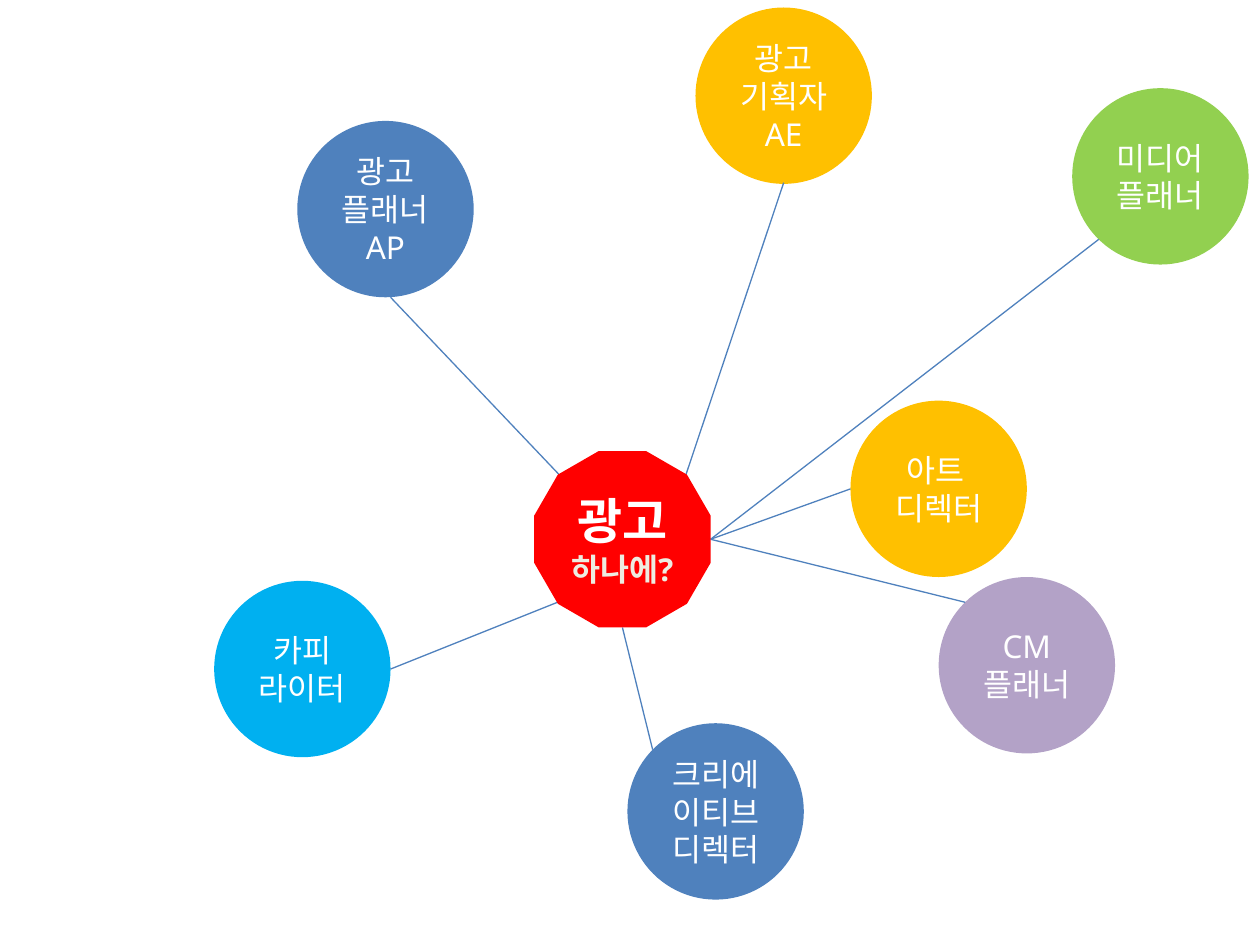
from dataclasses import dataclass

from lxml import etree
from pptx import Presentation
from pptx.dml.color import RGBColor
from pptx.enum.shapes import MSO_CONNECTOR, MSO_SHAPE
from pptx.enum.text import MSO_ANCHOR, PP_ALIGN
from pptx.oxml.ns import qn
from pptx.util import Inches, Pt


@dataclass(frozen=True)
class Theme:
    font: str = "Noto Sans"
    blue: str = "4F81BD"
    green: str = "92D050"
    red: str = "FF0000"
    amber: str = "FFC000"
    violet: str = "B3A2C7"
    sky: str = "00B0F0"
    white: str = "FFFFFF"
    cream: str = "EEECE1"
    title: int = 28
    gap: int = 24
    body: int = 18
    line: float = 0.75


THEME = Theme()
SIZE = 1.4  # every node has the same diameter

# left, top, fill, lines of text, spoke start on the hub, spoke end on the role
ROLES = [
    (2.36, 0.96, THEME.blue, ["광고", "플래너", "AP"], (4.45, 3.78), (3.1, 2.36)),
    (8.51, 0.7, THEME.green, ["미디어", "플래너"], (5.64, 4.28), (8.72, 1.9)),
    (5.52, 0.06, THEME.amber, ["광고", "기획자", "AE"], (5.44, 3.78), (6.22, 1.45)),
    (6.75, 3.18, THEME.amber, ["아트 ", "디렉터"], (5.64, 4.28), (6.75, 3.88)),
    (7.45, 4.58, THEME.violet, ["CM", "플래너"], (5.64, 4.28), (7.66, 4.78)),
    (4.98, 5.74, THEME.blue, ["크리에이티브 디렉터"], (4.94, 4.98), (5.18, 5.95)),
    (1.7, 4.61, THEME.sky, ["카피", "라이터"], (4.45, 4.77), (3.1, 5.31)),
]


def style_font(font, size, color, bold=False):
    font.name = THEME.font
    font.size = Pt(size)
    font.bold = bold
    font.color.rgb = RGBColor.from_string(color)


def add_node(page, kind, left, top, fill):
    """Add a plain filled node and return its text frame."""
    node = page.shapes.add_shape(
        kind, Inches(left), Inches(top), Inches(SIZE), Inches(SIZE))
    node.shadow.inherit = False
    node.fill.solid()
    node.fill.fore_color.rgb = RGBColor.from_string(fill)
    node.line.fill.background()
    frame = node.text_frame
    frame.word_wrap = True
    frame.vertical_anchor = MSO_ANCHOR.MIDDLE
    return frame


def add_role(page, left, top, fill, lines):
    frame = add_node(page, MSO_SHAPE.OVAL, left, top, fill)
    for index, line in enumerate(lines):
        para = frame.add_paragraph() if index else frame.paragraphs[0]
        para.text = line
        para.alignment = PP_ALIGN.CENTER
        style_font(para.font, THEME.body, THEME.white)


def add_hub(page, left, top):
    frame = add_node(page, MSO_SHAPE.DODECAGON, left, top, THEME.red)
    para = frame.paragraphs[0]
    para.alignment = PP_ALIGN.CENTER
    for text, size, color in [("광고", THEME.title, THEME.white),
                              (" ", THEME.gap, THEME.white),
                              ("하나에?", THEME.body, THEME.cream)]:
        span = para.add_run()
        span.text = text
        style_font(span.font, size, color, bold=True)


def add_spoke(page, start, end):
    spoke = page.shapes.add_connector(
        MSO_CONNECTOR.STRAIGHT, *(Inches(value) for value in start + end))
    spoke.line.color.rgb = RGBColor.from_string(THEME.blue)
    spoke.line.width = Pt(THEME.line)
    etree.SubElement(spoke.element.spPr, qn("a:effectLst"))


def build_mind_map(page):
    # Roles and their spokes
    for left, top, fill, lines, start, end in ROLES:
        add_role(page, left, top, fill, lines)
        add_spoke(page, start, end)
    # Central topic
    add_hub(page, 4.24, 3.58)


def main():
    deck = Presentation()
    deck.slide_width, deck.slide_height = Inches(10), Inches(7.5)
    page = deck.slides.add_slide(deck.slide_layouts[6])
    build_mind_map(page)
    deck.save("out.pptx")


if __name__ == "__main__":
    main()
